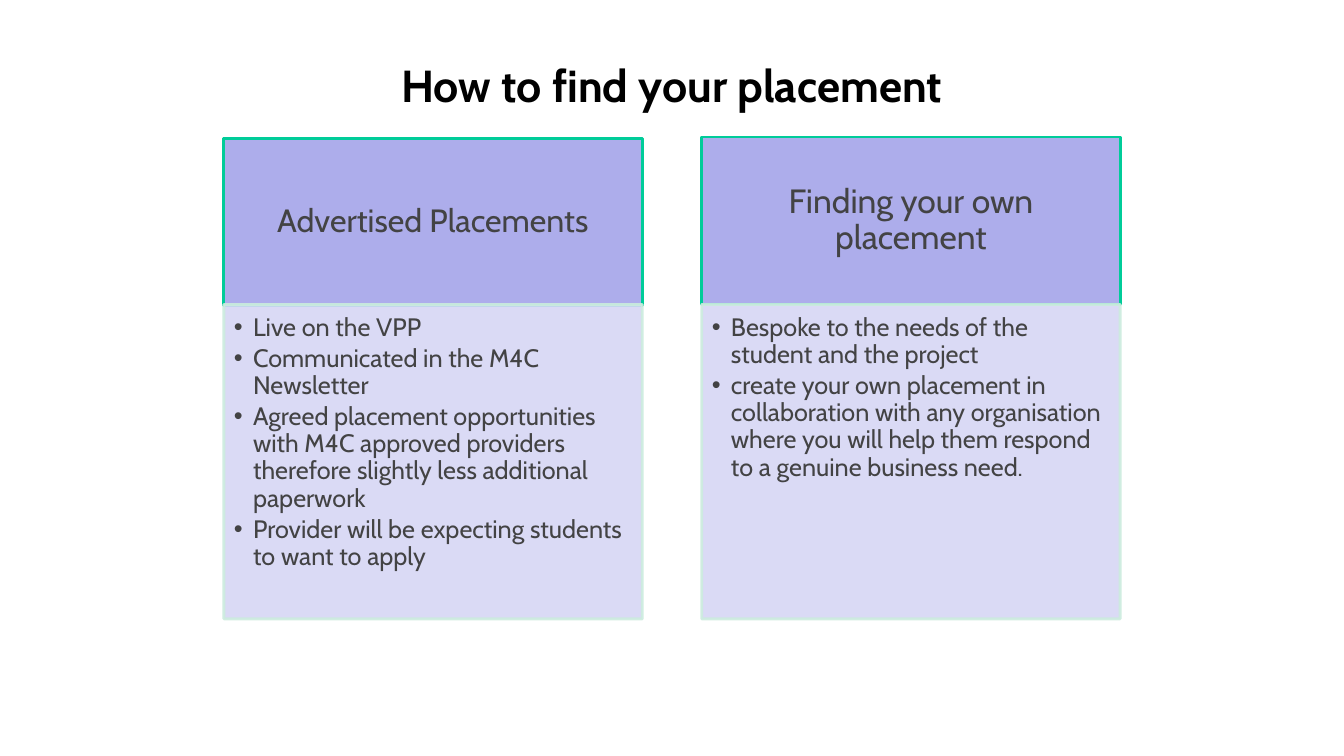
from dataclasses import dataclass

from lxml.etree import SubElement
from pptx import Presentation
from pptx.dml.color import RGBColor
from pptx.enum.text import MSO_ANCHOR, MSO_AUTO_SIZE, PP_ALIGN
from pptx.oxml.ns import qn
from pptx.shapes.placeholder import SlidePlaceholder
from pptx.util import Inches, Pt

BLACK = RGBColor(0x00, 0x00, 0x00)
GREY = RGBColor(0x43, 0x43, 0x44)
LAVENDER = RGBColor(0xAD, 0xAD, 0xEB)
PALE_LAVENDER = RGBColor(0xD6, 0xD6, 0xF5)
GREEN = RGBColor(0x00, 0xCC, 0x99)
PALE_GREEN = RGBColor(0xCC, 0xEC, 0xDE)

FONT = "Cabin"
COMPARISON_LAYOUT = 4

# Card grid, in inches
CARD_LEFT, CARD_PITCH, CARD_WIDTH = 2.22, 4.74, 4.15
LIST_TOP, LIST_HEIGHT = 3.02, 3.12
HEADING_HEIGHT = 1.66
BULLET_INDENT = 0.19


@dataclass(frozen=True)
class Card:
    heading: str
    heading_top: float
    heading_size: int
    items: tuple[str, ...]


CARDS = (
    Card("Advertised Placements", 1.37, 23, (
        "Live on the VPP",
        "Communicated in the M4C Newsletter",
        "Agreed placement opportunities with M4C approved providers "
        "therefore slightly less additional paperwork",
        "Provider will be expecting students to want to apply",
    )),
    Card("Finding your own placement", 1.36, 24, (
        "Bespoke to the needs of the student and the project",
        "create your own placement in collaboration with any "
        "organisation where you will help them respond to a genuine "
        "business need.",
    )),
)


def place(box: SlidePlaceholder, left: float, top: float,
          width: float, height: float) -> None:
    box.left, box.top = Inches(left), Inches(top)
    box.width, box.height = Inches(width), Inches(height)


def paint(box: SlidePlaceholder, fill: RGBColor, line: RGBColor,
          opacity: int = 100) -> None:
    """Fill and outline a box, with opacity in percent."""
    box.fill.solid()
    box.fill.fore_color.rgb = fill
    box.line.color.rgb = line
    box.line.width = Pt(2)
    if opacity < 100:
        for color in box._element.spPr.iter(qn("a:srgbClr")):
            SubElement(color, qn("a:alpha"), val=str(opacity * 1000))


def write(box: SlidePlaceholder, *texts: str, size: int,
          color: RGBColor = GREY, bold: bool = False,
          align: PP_ALIGN = PP_ALIGN.CENTER,
          anchor: MSO_ANCHOR = MSO_ANCHOR.MIDDLE,
          insets: tuple[float, float, float, float] = (0.1, 0.05, 0.1, 0.05),
          spacing: float = 1.0, after: float = 0,
          bullets: bool = False) -> None:
    """Write one paragraph per text; insets run left, top, right, bottom."""
    frame = box.text_frame
    frame.word_wrap = True
    frame.auto_size = MSO_AUTO_SIZE.NONE
    frame.vertical_anchor = anchor
    (frame.margin_left, frame.margin_top,
     frame.margin_right, frame.margin_bottom) = map(Inches, insets)
    for index, text in enumerate(texts):
        para = frame.add_paragraph() if index else frame.paragraphs[0]
        para.alignment = align
        para.line_spacing = spacing
        para.space_before = Pt(0)
        para.space_after = Pt(after)
        if bullets:
            para.level = 1
            properties = para._p.get_or_add_pPr()
            properties.set("marL", str(Inches(BULLET_INDENT)))
            properties.set("indent", str(-Inches(BULLET_INDENT)))
            SubElement(properties, qn("a:buChar"), char="•")
        span = para.add_run()
        span.text = text
        span.font.name = FONT
        span.font.size = Pt(size)
        span.font.bold = bold
        span.font.color.rgb = color


def draw_card(heading: SlidePlaceholder, body: SlidePlaceholder,
              card: Card, left: float) -> None:
    place(heading, left, card.heading_top, CARD_WIDTH, HEADING_HEIGHT)
    paint(heading, LAVENDER, GREEN)
    write(heading, card.heading, size=card.heading_size, spacing=0.9,
          insets=(0.18, 0.1, 0.18, 0.1))
    place(body, left, LIST_TOP, CARD_WIDTH, LIST_HEIGHT)
    paint(body, PALE_LAVENDER, PALE_GREEN, opacity=90)
    write(body, *card.items, size=18, align=PP_ALIGN.LEFT,
          anchor=MSO_ANCHOR.TOP, insets=(0.1, 0.1, 0.14, 0.16),
          spacing=0.9, after=2.7, bullets=True)


def main() -> None:
    deck = Presentation()
    deck.slide_width, deck.slide_height = Inches(13.33), Inches(7.5)
    page = deck.slides.add_slide(deck.slide_layouts[COMPARISON_LAYOUT])
    title, *boxes = page.placeholders
    place(title, 1, 0.25, 11.33, 1.17)
    write(title, "How to find your placement", size=32, color=BLACK, bold=True)
    for column, card in enumerate(CARDS):
        heading, body = boxes[2 * column:2 * column + 2]
        draw_card(heading, body, card, CARD_LEFT + column * CARD_PITCH)
    deck.save("out.pptx")


if __name__ == "__main__":
    main()
